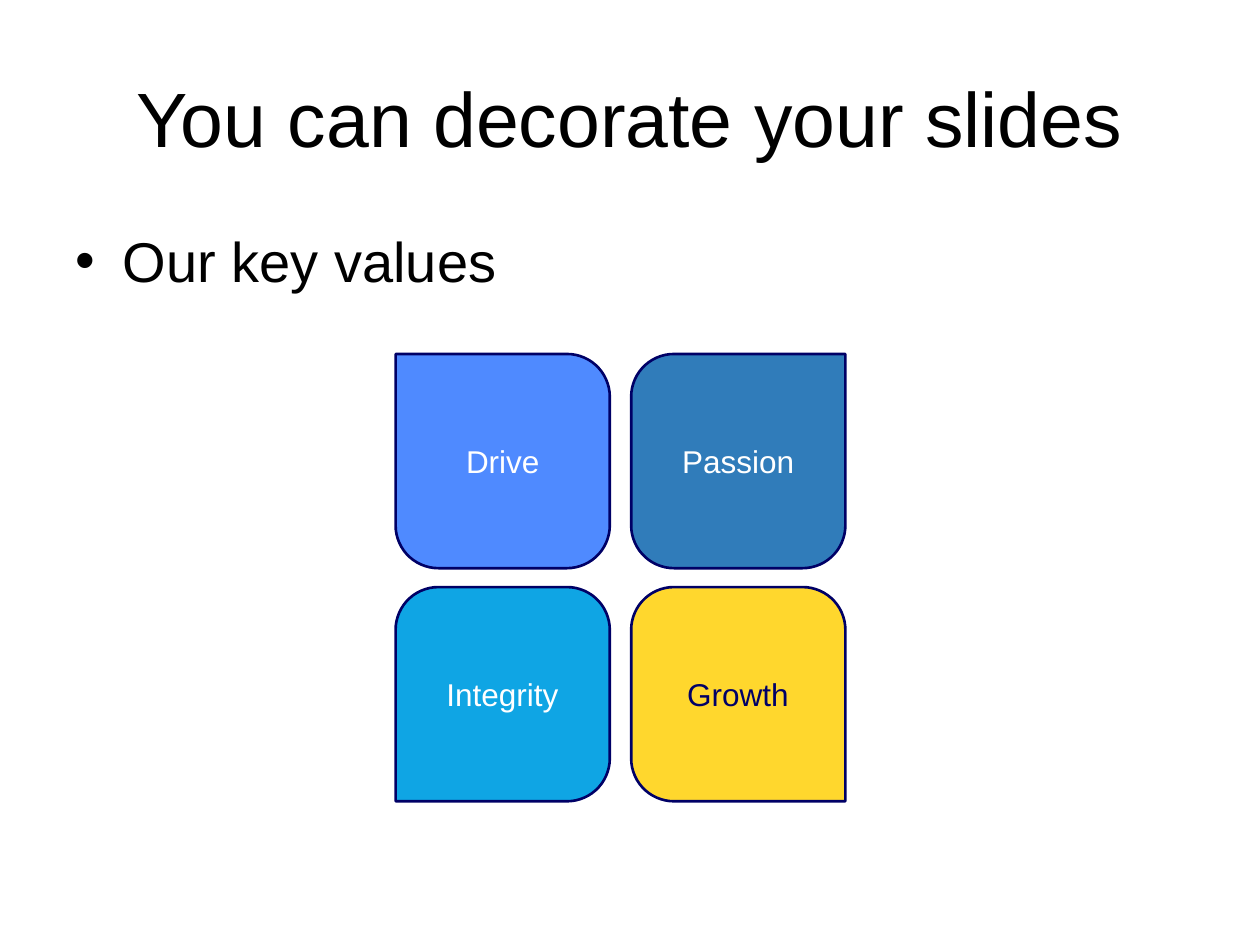
from math import cos, radians, sin

from pptx import Presentation
from pptx.dml.color import RGBColor
from pptx.enum import text
from pptx.util import Inches, Pt

BLACK = RGBColor(0x00, 0x00, 0x00)
WHITE = RGBColor(0xFF, 0xFF, 0xFF)
NAVY = RGBColor(0x00, 0x00, 0x66)
BLUE = RGBColor(0x4F, 0x8A, 0xFF)
STEEL = RGBColor(0x30, 0x7C, 0xBA)
SKY = RGBColor(0x0F, 0xA5, 0xE4)
YELLOW = RGBColor(0xFF, 0xD7, 0x2D)

TILE, RADIUS = 1.7, 0.34
LEFT, TOP = 3.14, 2.81
PITCH_X, PITCH_Y = 1.87, 1.85
LABEL_HEIGHT = 0.4
CORNERS = [(1, 1), (-1, 1), (-1, -1), (1, -1)]


class ValuesSlide:
    """Holds the text style and the current slide, and adds its elements."""

    font_name = "Arial"

    def __init__(self, slide):
        self.slide = slide

    def add_words(self, paragraph, words, size, color):
        run = paragraph.add_run()
        run.text = words
        run.font.name = self.font_name
        run.font.size = Pt(size)
        run.font.color.rgb = color

    def fill_placeholder(self, index, words, size, top, height):
        holder = self.slide.placeholders[index]
        holder.left, holder.top = Inches(0.5), Inches(top)
        holder.width, holder.height = Inches(9), Inches(height)
        self.add_words(holder.text_frame.paragraphs[0], words, size, BLACK)

    def add_tile(self, center_x, center_y, square_corner, color):
        outline = []
        for quadrant, (side_x, side_y) in enumerate(CORNERS):
            if (side_x, side_y) == square_corner:
                outline.append((center_x + side_x * TILE / 2, center_y + side_y * TILE / 2))
                continue
            arc_x = center_x + side_x * (TILE / 2 - RADIUS)
            arc_y = center_y + side_y * (TILE / 2 - RADIUS)
            for step in range(0, 91, 6):
                angle = radians(90 * quadrant + step)
                outline.append((arc_x + RADIUS * cos(angle), arc_y + RADIUS * sin(angle)))
        points = [(Inches(x), Inches(y)) for x, y in outline]
        builder = self.slide.shapes.build_freeform(*points[0])
        builder.add_line_segments(points[1:], close=True)
        tile = builder.convert_to_shape()
        tile.shadow.inherit = False
        tile.fill.solid()
        tile.fill.fore_color.rgb = color
        tile.line.color.rgb = NAVY
        tile.line.width = Pt(1.5)

    def add_label(self, center_x, center_y, words, width, color):
        label = self.slide.shapes.add_textbox(
            Inches(center_x - width / 2), Inches(center_y - LABEL_HEIGHT / 2),
            Inches(width), Inches(LABEL_HEIGHT))
        frame = label.text_frame
        frame.word_wrap = False
        frame.auto_size = text.MSO_AUTO_SIZE.SHAPE_TO_FIT_TEXT
        self.add_words(frame.paragraphs[0], words, 18, color)


def main():
    deck = Presentation()
    deck.slide_width, deck.slide_height = Inches(10), Inches(7.5)
    page = ValuesSlide(deck.slides.add_slide(deck.slide_layouts[1]))
    page.fill_placeholder(0, "You can decorate your slides", 44, 0.3, 1.25)
    page.fill_placeholder(1, "Our key values", 32, 1.75, 1.23)

    values = [
        ("Drive", 0.78, BLUE, WHITE),
        ("Passion", 1.09, STEEL, WHITE),
        ("Integrity", 1.09, SKY, WHITE),
        ("Growth", 1.01, YELLOW, NAVY),
    ]
    centers = []
    for position, (_, _, fill, _) in enumerate(values):
        row, column = divmod(position, 2)
        center = (LEFT + TILE / 2 + column * PITCH_X, TOP + TILE / 2 + row * PITCH_Y)
        page.add_tile(*center, (2 * column - 1, 2 * row - 1), fill)
        centers.append(center)
    for center, (words, width, _, color) in zip(centers, values):
        page.add_label(*center, words, width, color)

    deck.save("out.pptx")


if __name__ == "__main__":
    main()
